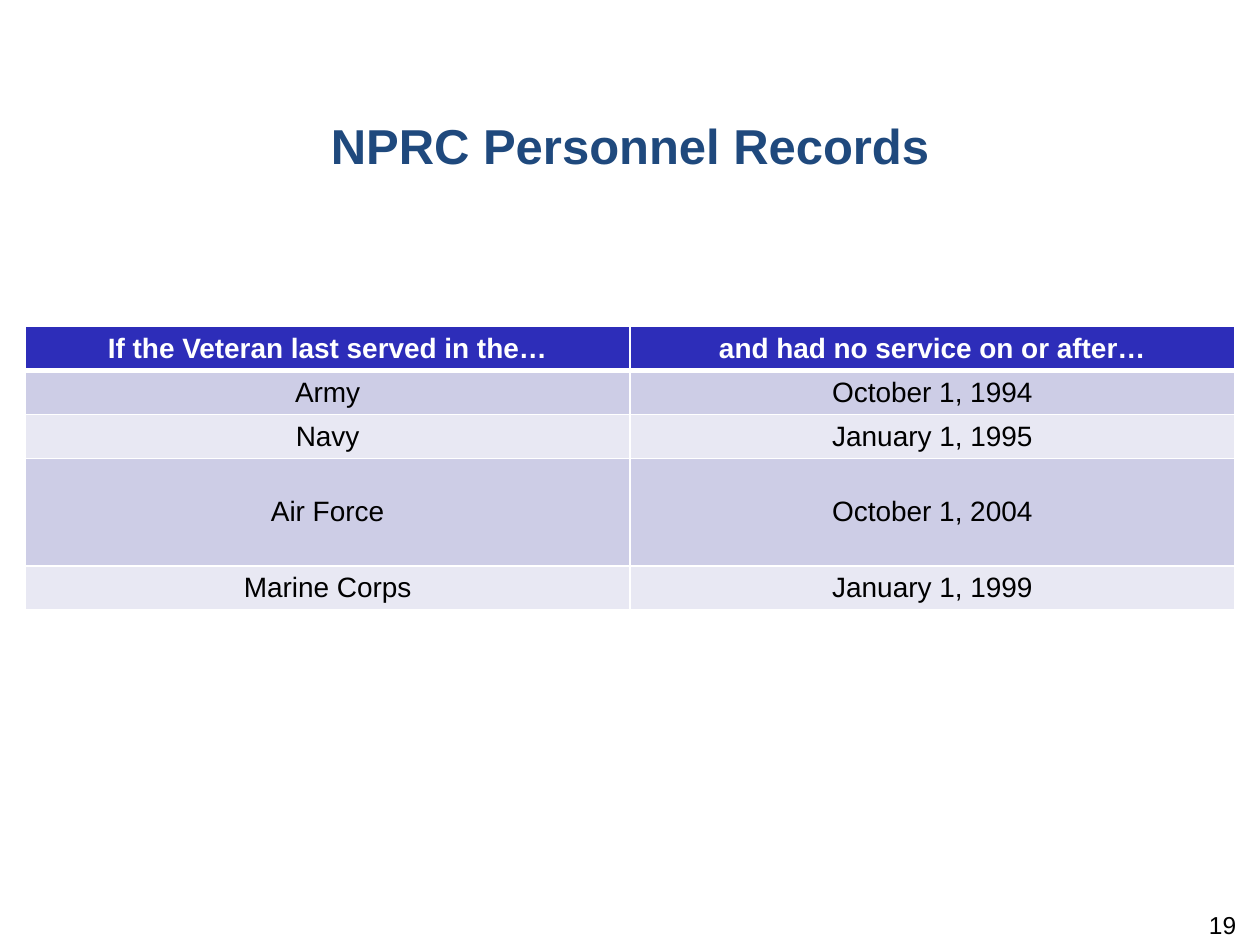
import pptx
import pptx.util
import pptx.dml.color
import pptx.enum.text
import pptx.oxml
import pptx.oxml.ns

Inches = pptx.util.Inches
Pt = pptx.util.Pt
ALIGN = pptx.enum.text.PP_ALIGN
ANCHOR = pptx.enum.text.MSO_ANCHOR

TITLE = "NPRC Personnel Records"
NUMBER = "19"
ROWS = [
    ("If the Veteran last served in the…", "and had no service on or after…"),
    ("Army", "October 1, 1994"),
    ("Navy", "January 1, 1995"),
    ("Air Force", "October 1, 2004"),
    ("Marine Corps", "January 1, 1999"),
]
HEIGHTS = [0.35, 0.35, 0.35, 0.85, 0.35]
HEAD, BANDS = "2D2DB9", ("CDCDE6", "E8E8F3")


def color(code):
    return pptx.dml.color.RGBColor.from_string(code)


def write(frame, text, size, code, align, bold=False):
    frame.text = text
    para = frame.paragraphs[0]
    para.alignment = align
    font = para.runs[0].font
    font.name, font.size, font.bold = "Arial", Pt(size), bold
    font.color.rgb = color(code)


def label(slide, box, top, *style):
    """Add a wrapped text box whose inner top margin is given."""
    frame = slide.shapes.add_textbox(*map(Inches, box)).text_frame
    frame.word_wrap = True
    frame.vertical_anchor = ANCHOR.TOP
    frame.margin_top = Inches(top)
    write(frame, *style)


def border(cell, side, width):
    line = pptx.oxml.parse_xml(
        f'<a:ln{side} {pptx.oxml.ns.nsdecls("a")} w="{Pt(width)}">'
        '<a:solidFill><a:srgbClr val="FFFFFF"/></a:solidFill>'
        f'</a:ln{side}>')
    cell._tc.get_or_add_tcPr().append(line)


def grid(slide):
    table = slide.shapes.add_table(
        len(ROWS), 2, Inches(0.2), Inches(2.59),
        Inches(9.6), Inches(sum(HEIGHTS))).table
    for r, row in enumerate(ROWS):
        table.rows[r].height = Inches(HEIGHTS[r])
        head = r == 0
        wide = {"T": 3 if r == 1 else 1, "B": 3 if head else 1}
        for c, text in enumerate(row):
            cell = table.cell(r, c)
            cell.vertical_anchor = ANCHOR.MIDDLE
            cell.margin_left = cell.margin_right = Inches(0.08)
            cell.margin_top = cell.margin_bottom = Inches(0.04)
            for side in "LRTB":
                border(cell, side, wide.get(side, 1))
            cell.fill.solid()
            cell.fill.fore_color.rgb = color(HEAD if head else BANDS[(r - 1) % 2])
            write(cell.text_frame, text, 16, "FFFFFF" if head else "000000",
                  ALIGN.CENTER, head)


def main():
    deck = pptx.Presentation()
    deck.slide_width, deck.slide_height = Inches(10), Inches(7.5)
    slide = deck.slides.add_slide(deck.slide_layouts[6])
    label(slide, (0, 0.87, 10, 1.19), 0.05, TITLE, 28, "1F497D", ALIGN.CENTER, True)
    label(slide, (7.58, 7.22, 2.33, 0.4), 0, NUMBER, 14, "000000", ALIGN.RIGHT)
    grid(slide)
    deck.save("out.pptx")


if __name__ == "__main__":
    main()
